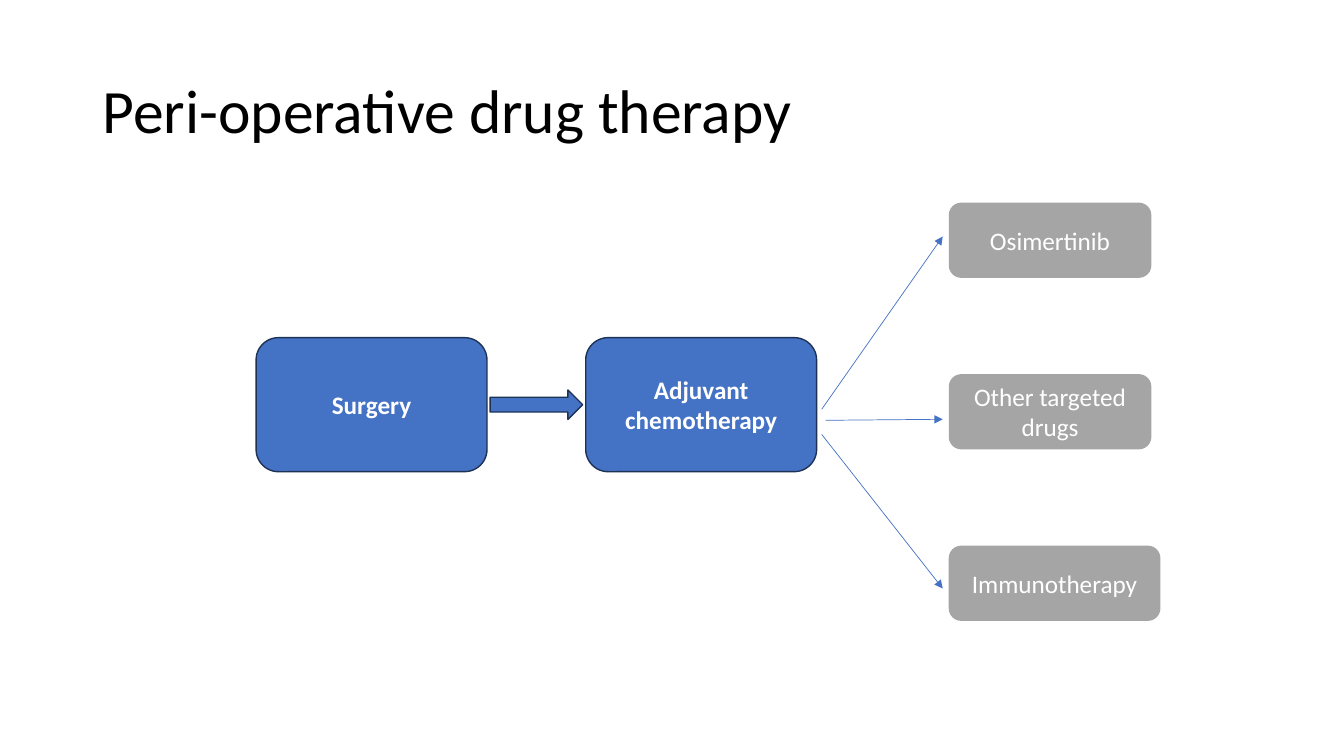
from lxml import etree
from pptx import Presentation
from pptx.dml.color import RGBColor
from pptx.enum.shapes import MSO_CONNECTOR as Connector, MSO_SHAPE as Preset
from pptx.enum.text import MSO_ANCHOR as Anchor, PP_ALIGN as Align
from pptx.oxml.ns import qn
from pptx.util import Inches, Pt

COLORS = {"blue": "4472C4", "outline": "1E3256", "gray": "A5A5A5",
          "white": "FFFFFF", "black": "000000"}
FONT = "Calibri"


def color(name):
    return RGBColor.from_string(COLORS[name])


def write(shape, text, size, color_name, align, bold=False):
    frame = shape.text_frame
    frame.word_wrap = True
    frame.vertical_anchor = Anchor.MIDDLE
    paragraph = frame.paragraphs[0]
    paragraph.text = text
    paragraph.alignment = align
    font = paragraph.font
    font.name, font.size, font.bold = FONT, Pt(size), bold
    font.color.rgb = color(color_name)
    return paragraph


def add_block(slide, preset, box, fill, outline=None):
    shape = slide.shapes.add_shape(preset, *map(Inches, box))
    shape.shadow.inherit = False
    shape.fill.solid()
    shape.fill.fore_color.rgb = color(fill)
    if outline:
        shape.line.color.rgb = color(outline)
        shape.line.width = Pt(1)
    else:
        shape.line.fill.background()
    return shape


def add_thin_arrow(slide, start, end):
    arrow = slide.shapes.add_connector(Connector.STRAIGHT, *map(Inches, (*start, *end)))
    arrow.line.color.rgb = color("blue")
    arrow.line.width = Pt(0.5)
    etree.SubElement(arrow.line._get_or_add_ln(), qn("a:tailEnd"), type="triangle")
    etree.SubElement(arrow._element.spPr, qn("a:effectLst"))


def add_title(slide, box, text):
    title = slide.shapes.add_textbox(*map(Inches, box))
    write(title, text, 44, "black", Align.LEFT).line_spacing = 0.9


def add_treatment_steps(slide, box, steps):
    left, top, width, height = box
    step_width = width * 0.412
    pitch = (width - step_width) / (len(steps) - 1)
    for index, text in enumerate(steps):
        step_left = left + index * pitch
        step = add_block(slide, Preset.ROUNDED_RECTANGLE,
                         (step_left, top, step_width, height), "blue", "outline")
        write(step, text, 18, "white", Align.CENTER, bold=True)
        if index:
            gap = pitch - step_width
            add_block(slide, Preset.RIGHT_ARROW,
                      (step_left - gap + 0.03, top + height * 0.39, gap - 0.06, height * 0.22),
                      "blue", "outline")


def add_drug_options(slide, box, options):
    left, top, width, height = box
    option_height = height * 0.18
    pitch = (height - option_height) / (len(options) - 1)
    for index, (text, extra_width, start, tip_share) in enumerate(options):
        option_top = top + index * pitch
        option = add_block(slide, Preset.ROUNDED_RECTANGLE,
                           (left, option_top, width + extra_width, option_height), "gray")
        write(option, text, 18, "white", Align.CENTER)
        add_thin_arrow(slide, start, (left - 0.06, option_top + option_height * tip_share))


def main():
    presentation = Presentation()
    presentation.slide_width = Inches(13.33)
    presentation.slide_height = Inches(7.5)
    slide = presentation.slides.add_slide(presentation.slide_layouts[6])
    add_title(slide, (0.92, 0.4, 11.5, 1.45), "Peri-operative drug therapy")
    add_treatment_steps(slide, (2.54, 3.35, 5.56, 1.33), ["Surgery", "Adjuvant chemotherapy"])
    add_drug_options(slide, (9.41, 2.01, 2.01, 4.15), [
        ("Osimertinib", 0, (8.15, 4.06), 0.45),
        ("Other targeted drugs", 0, (8.19, 4.17), 0.6),
        ("Immunotherapy", 0.09, (8.15, 4.31), 0.57),
    ])
    presentation.save("out.pptx")


if __name__ == "__main__":
    main()
